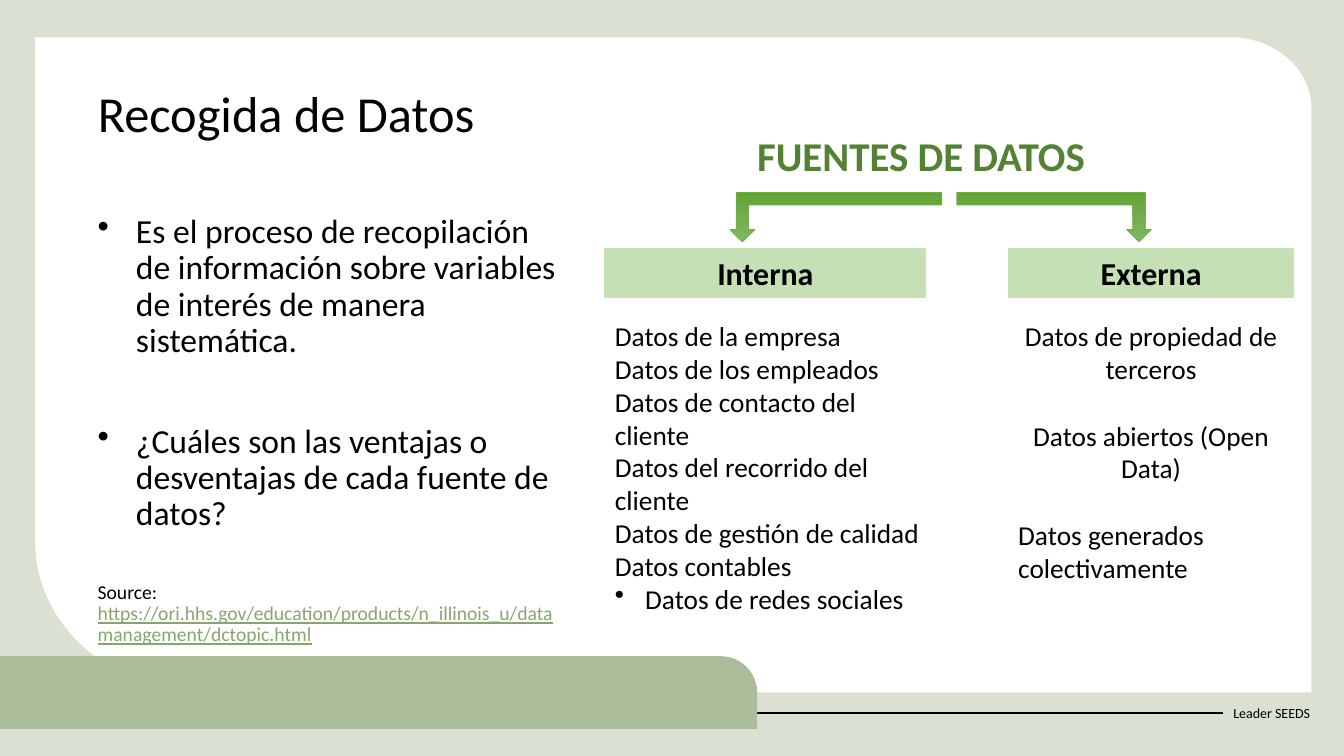
from dataclasses import dataclass
from math import cos, pi, sin
from lxml import etree
from pptx import Presentation
from pptx import util as u
from pptx.dml.color import RGBColor as Rgb
from pptx.enum import shapes as kinds, text as txt
from pptx.oxml import ns


@dataclass
class Theme:
    font: str = "Calibri"
    page: str = "DAE0D2"
    panel: str = "FFFFFF"
    tab: str = "AABC99"
    ink: str = "000000"
    head: str = "548235"
    label: str = "C5E0B4"
    link: str = "87A66E"
    edge: str = "70AD47"
    light: str = "81B861"
    dark: str = "62A336"
    title: float = 36
    banner: float = 29.2
    body: float = 24
    group: float = 22.8
    item: float = 19.5
    note: float = 14
    foot: float = 10


look = Theme()
rows = 90
deck = Presentation()
deck.slide_width, deck.slide_height = u.Inches(13.33), u.Inches(7.5)
cell = deck.slide_height / rows
slide = deck.slides.add_slide(deck.slide_layouts[5])
back = slide.background.fill
back.solid()
back.fore_color.rgb = Rgb.from_string(look.page)
left, center = txt.PP_ALIGN.LEFT, txt.PP_ALIGN.CENTER


def place(kind, *grid):
    spot = [round(n * cell) for n in grid]
    if kind is None:
        shape = slide.shapes.add_textbox(*spot)
        shape.text_frame.word_wrap = True
        return shape
    shape = slide.shapes.add_shape(kind, *spot)
    shape.shadow.inherit = False
    shape.line.fill.background()
    return shape


def write(para, words, size, color=look.ink, bold=False, align=left, bullet=0):
    para.alignment = align
    if bullet:
        props = para._p.get_or_add_pPr()
        props.set("marL", str(u.Inches(bullet)))
        props.set("indent", str(-u.Inches(bullet)))
        etree.SubElement(props, ns.qn("a:buChar")).set("char", "•")
    run = para.add_run()
    run.text = words
    run.font.name, run.font.size, run.font.bold = look.font, u.Pt(size), bold
    run.font.color.rgb = Rgb.from_string(color)
    return run


west, east, north, south = 4.2, 156.1, 4.44, 82.44
turns = [(146.4, 12.96, 9.7, 8.52, -pi / 2), (24.6, 64.56, 20.4, 17.88, pi / 2)]
arcs = []
for x, y, wide, high, start in turns:
    steps = [start + pi / 2 * n / 40 for n in range(41)]
    arcs.append([((x + wide * cos(a)) * cell, (y + high * sin(a)) * cell) for a in steps])
pen = slide.shapes.build_freeform(west * cell, north * cell)
pen.add_line_segments(arcs[0] + [(east * cell, south * cell)] + arcs[1], close=True)
panel = pen.convert_to_shape()
panel.shadow.inherit = False
panel.line.fill.background()
panel.fill.solid()
panel.fill.fore_color.rgb = Rgb.from_string(look.panel)

base = 84.84
rule = slide.shapes.add_connector(kinds.MSO_CONNECTOR.STRAIGHT, 0, round(base * cell),
                                  round(145.6 * cell), round(base * cell))
rule.line.color.rgb = Rgb.from_string(look.ink)
rule.line.width = u.Pt(1.5)
etree.SubElement(rule.element.spPr, ns.qn("a:effectLst"))
foot = place(None, 145.6, 82.44, 12.12, 4.8).text_frame
foot.word_wrap = False
foot.vertical_anchor = txt.MSO_ANCHOR.MIDDLE
write(foot.paragraphs[0], "Leader SEEDS", look.foot)

tab = place(kinds.MSO_SHAPE.ROUND_1_RECTANGLE, 0, 78.12, 90.12, 8.64)
tab.adjustments[0] = 0.5
tab.fill.solid()
tab.fill.fore_color.rgb = Rgb.from_string(look.tab)

title = slide.shapes.title
title.left, title.top, title.width, title.height = [
    round(n * cell) for n in (10.44, 9.96, 139, 10.56)]
title.element.getparent().append(title.element)
frame = title.text_frame
frame.auto_size = txt.MSO_AUTO_SIZE.NONE
frame.vertical_anchor = txt.MSO_ANCHOR.TOP
write(frame.paragraphs[0], "Recogida de Datos", look.title)
frame.paragraphs[0].line_spacing = 0.9

body = place(None, 10.44, 24.96, 57.84, 52.44).text_frame
points = [
    ("Es el proceso de recopilación de información sobre variables de interés de manera sistemática.",
     look.body, 0.38, 0),
    ("¿Cuáles son las ventajas o desventajas de cada fuente de datos?", look.body, 0.38, 46),
    ("Source: ", look.note, 0, 35.5),
]
for n, (words, size, bullet, gap) in enumerate(points):
    para = body.add_paragraph() if n else body.paragraphs[0]
    write(para, words, size, bullet=bullet)
    para.line_spacing = 0.9
    para.space_before = u.Pt(gap)
link = write(para, "https://ori.hhs.gov/education/products/n_illinois_u/datamanagement/dctopic.html",
             look.note, look.link)
link.font.underline = True

banner = place(None, 86.4, 15, 46.44, 7).text_frame
write(banner.paragraphs[0], "FUENTES DE DATOS", look.banner, look.head, True, center)

inner, outer, wide = 72, 120, 34
for words, x, span in [("Interna", inner, 38.2), ("Externa", outer, wide)]:
    label = place(kinds.MSO_SHAPE.RECTANGLE, x, 29.64, span, 5.76)
    label.fill.solid()
    label.fill.fore_color.rgb = Rgb.from_string(look.label)
    label.line.color.rgb = Rgb.from_string(look.label)
    label.line.width = u.Pt(0.75)
    label.text_frame.vertical_anchor = txt.MSO_ANCHOR.MIDDLE
    write(label.text_frame.paragraphs[0], words, look.group, bold=True, align=center)

top = 37.44
items = ["Datos de la empresa", "Datos de los empleados", "Datos de contacto del cliente",
         "Datos del recorrido del cliente", "Datos de gestión de calidad",
         "Datos contables", "Datos de redes sociales"]
own = place(None, inner, top, 39.3, 40.56).text_frame
for n, words in enumerate(items):
    para = own.add_paragraph() if n else own.paragraphs[0]
    write(para, words, look.item, bullet=0.3 if words == items[-1] else 0)

others = [("Datos de propiedad de terceros", center), ("Datos abiertos (Open Data)", center),
          ("Datos generados colectivamente", left)]
for n, (words, align) in enumerate(others):
    note = place(None, outer, top + 11.84 * n, wide, 9.12).text_frame
    write(note.paragraphs[0], words, look.item, align=align)

for x, span, flip in [(86.88, 25.2, False), (113.88, 23.16, True)]:
    arrow = place(kinds.MSO_SHAPE.BENT_UP_ARROW, x, 22.92, span, 5.88)
    arrow.rotation = 180
    if flip:
        arrow.element.spPr.xfrm.set("flipH", "1")
    arrow.fill.gradient()
    arrow.fill.gradient_angle = 270
    for stop, color in zip(arrow.fill.gradient_stops, (look.light, look.dark)):
        stop.color.rgb = Rgb.from_string(color)
    arrow.line.color.rgb = Rgb.from_string(look.edge)
    arrow.line.width = u.Pt(0.5)

deck.save("out.pptx")
